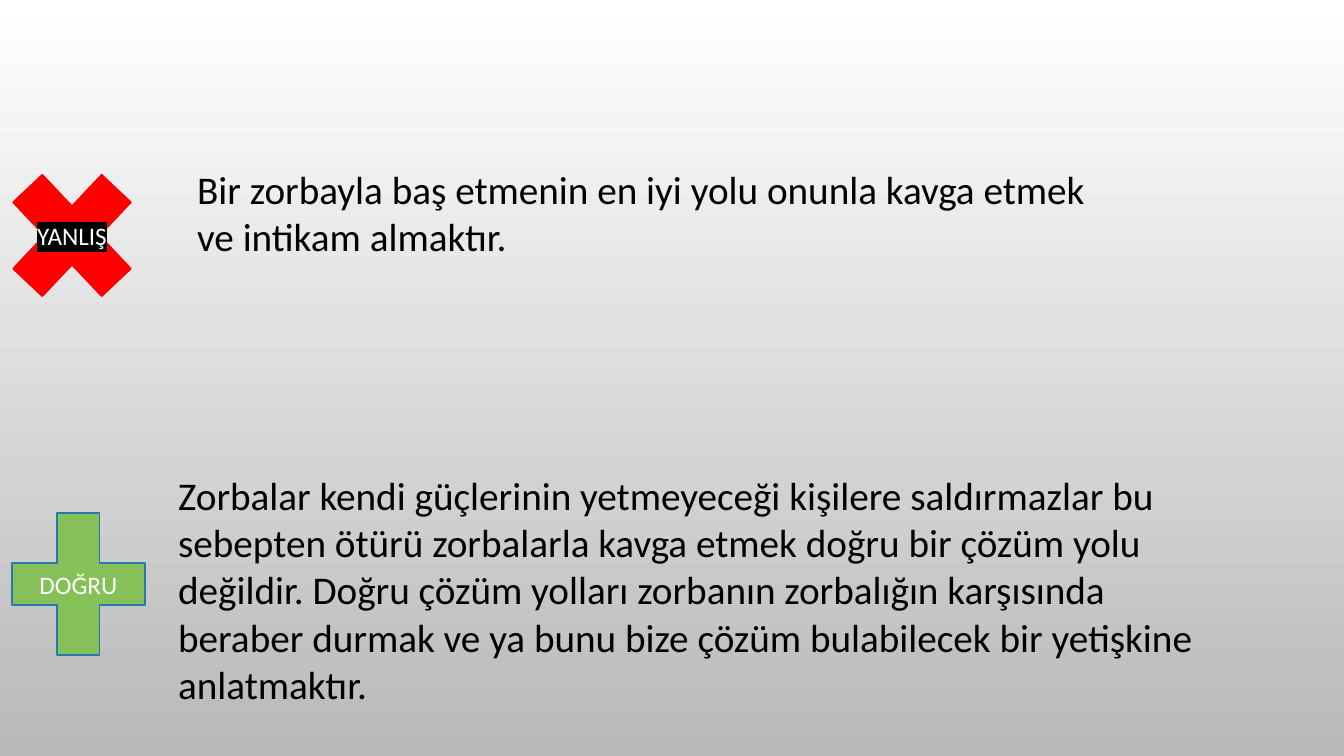
from lxml.etree import SubElement
from pptx import Presentation
from pptx.dml.color import RGBColor
from pptx.enum.shapes import MSO_SHAPE as Shape
from pptx.enum.text import MSO_ANCHOR as Anchor, MSO_AUTO_SIZE as Fit, PP_ALIGN as Align
from pptx.oxml.ns import qn
from pptx.util import Cm, Pt

WRONG = "Bir zorbayla baş etmenin en iyi yolu onunla kavga etmek ve intikam almaktır."
RIGHT = (
    "Zorbalar kendi güçlerinin yetmeyeceği kişilere saldırmazlar bu sebepten ötürü "
    "zorbalarla kavga etmek doğru bir çözüm yolu değildir. Doğru çözüm yolları zorbanın "
    "zorbalığın karşısında beraber durmak ve ya bunu bize çözüm bulabilecek bir "
    "yetişkine anlatmaktır."
)


def color(code):
    return RGBColor.from_string(code)


class Page:
    font = "Calibri"

    def __init__(self, deck):
        self.slide = deck.slides.add_slide(deck.slide_layouts[6])

    def backdrop(self, *codes):
        """Fill the background with a gradient from top to bottom."""
        fill = self.slide.background.fill
        fill.gradient()
        fill.gradient_angle = 270
        for stop, code in zip(fill.gradient_stops, codes):
            stop.color.rgb = color(code)

    def label(self, frame, text, size, code, **form):
        """Put one styled run in a frame and return it."""
        for name, value in form.items():
            setattr(frame, name, value)
        run = frame.paragraphs[0].add_run()
        run.text = text
        for name, value in {"name": self.font, "size": Pt(size)}.items():
            setattr(run.font, name, value)
        run.font.color.rgb = color(code)
        return run

    def text(self, box, text):
        frame = self.slide.shapes.add_textbox(*map(Cm, box)).text_frame
        self.label(frame, text, 28, "000000", word_wrap=True,
                   auto_size=Fit.SHAPE_TO_FIT_TEXT)

    def sign(self, kind, box, text, fill, line, mark=None):
        """Add a symbol with a label, highlighted in the colour mark if given."""
        sign = self.slide.shapes.add_shape(kind, *map(Cm, box))
        sign.shadow.inherit = False
        sign.fill.solid()
        sign.fill.fore_color.rgb = color(fill)
        sign.line.color.rgb = color(line)
        sign.line.width = Pt(1.25)
        frame = sign.text_frame
        run = self.label(frame, text, 18, "FFFFFF", word_wrap=True,
                         vertical_anchor=Anchor.MIDDLE)
        frame.paragraphs[0].alignment = Align.CENTER
        if mark:
            props = run._r.get_or_add_rPr()
            light = SubElement(props, qn("a:highlight"))
            SubElement(light, qn("a:srgbClr"), val=mark)
            props.find(qn("a:solidFill")).addnext(light)


def main():
    deck = Presentation()
    deck.slide_width, deck.slide_height = Cm(33.87), Cm(19.05)
    page = Page(deck)
    page.backdrop("FFFFFF", "B9B9B9")
    page.text((4.72, 4.04, 22.94, 2.64), WRONG)
    page.sign(Shape.MATH_MULTIPLY, (-0.33, 3.66, 4.29, 4.55), "YANLIŞ",
              "FF0000", "FF0000", mark="000000")
    page.sign(Shape.MATH_PLUS, (-0.3, 12.29, 4.55, 4.85), "DOĞRU",
              "86C157", "2379B0")
    page.text((4.24, 11.76, 26.21, 6.25), RIGHT)
    deck.save("out.pptx")


if __name__ == "__main__":
    main()
